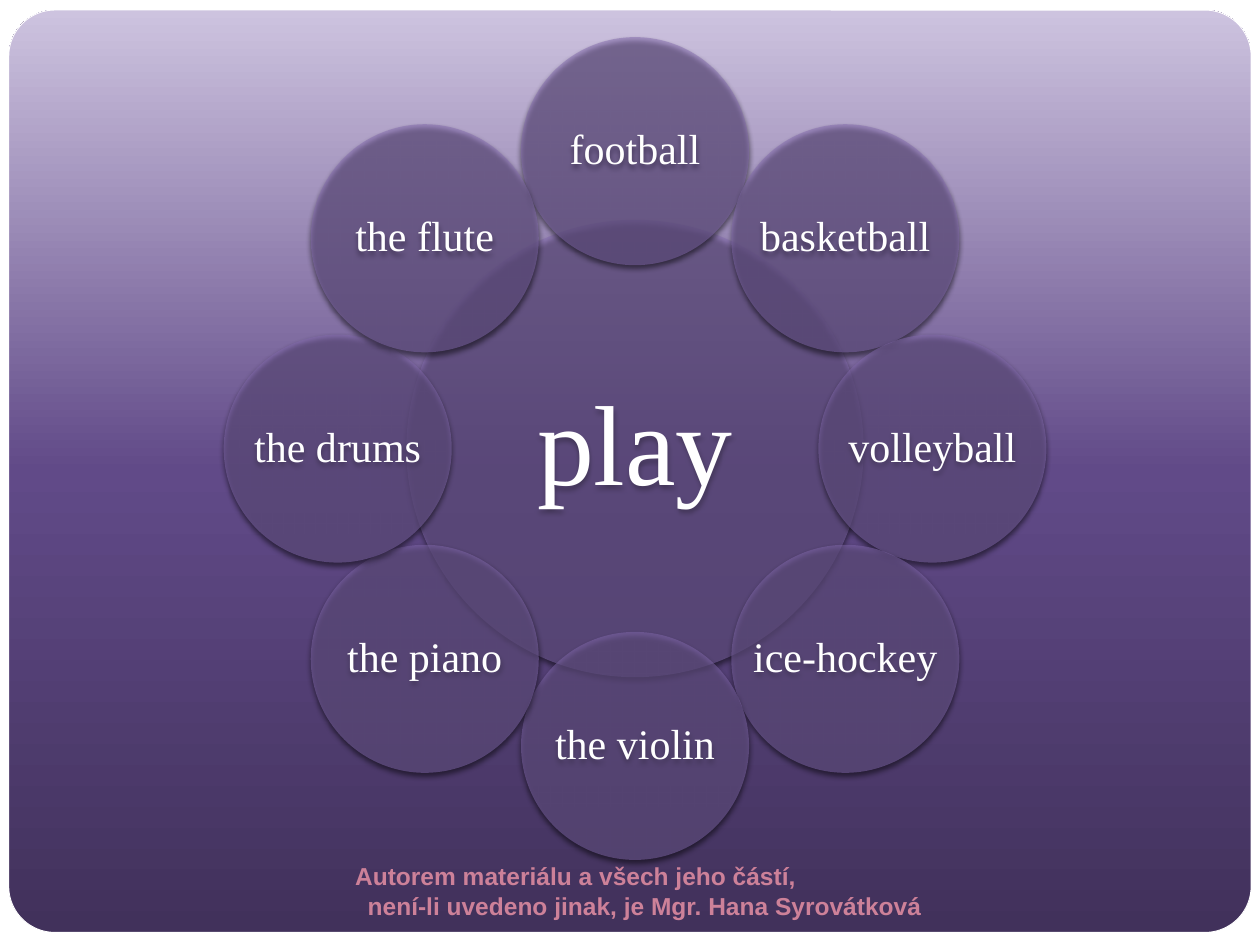
import copy
import math

from lxml import etree
from pptx import Presentation
from pptx import util as u
from pptx.dml.color import RGBColor
from pptx.enum import shapes, text
from pptx.oxml import ns

COLORS = {
    "white": "FFFFFF",
    "black": "000000",
    "dusk": "41315B",
    "violet": "614A88",
    "lilac": "CDC3DF",
    "bubble": "836AAE",
    "credit": "CD8199",
}
ACTIVITIES = [
    "football", "basketball", "volleyball", "ice-hockey",
    "the violin", "the piano", "the drums", "the flute",
]
CREDIT_LINES = [
    ("Autorem materiálu a všech jeho částí,", 0),
    ("není-li uvedeno jinak, je Mgr. Hana Syrovátková", 0.1),
]
CENTER_X, CENTER_Y = 5.04, 3.56
RING_RADIUS = 2.36
HUB_SIZE, BUBBLE_SIZE = 3.63, 1.81


def color(name):
    return RGBColor.from_string(COLORS[name])


def set_attributes(target, values):
    for name, value in values.items():
        setattr(target, name, value)


def add_child(parent, tag, **attributes):
    child = etree.SubElement(parent, ns.qn(tag))
    for name, value in attributes.items():
        child.set(name, str(value))
    return child


def fill_gradient(fill, names):
    fill.gradient()
    fill.gradient_angle = 90
    first, last = fill.gradient_stops
    stop_list = first._gs.getparent()
    stop_list.insert(1, copy.deepcopy(first._gs))
    for index, (stop, name) in enumerate(zip(fill.gradient_stops, names)):
        stop.color.rgb = color(name)
        stop.position = index / (len(names) - 1)


def add_panel(slide):
    panel = slide.shapes.add_shape(
        shapes.MSO_SHAPE.ROUNDED_RECTANGLE,
        u.Inches(0.07), u.Inches(0.08), u.Inches(9.86), u.Inches(7.32),
    )
    panel.adjustments[0] = 0.05
    panel.shadow.inherit = False
    fill_gradient(panel.fill, ["dusk", "violet", "lilac"])
    panel.line.color.rgb = color("white")
    panel.line.width = u.Pt(0.5)


def add_shadow(shape):
    shape.shadow.inherit = False
    effects = shape._element.spPr.find(ns.qn("a:effectLst"))
    shadow = add_child(
        effects, "a:outerShdw", blurRad=u.Pt(3), dist=u.Pt(2),
        dir=90 * 60000, rotWithShape=0,
    )
    shade = add_child(shadow, "a:srgbClr", val=COLORS["black"])
    add_child(shade, "a:alpha", val=50000)


def write_paragraph(paragraph, words, font_values, paragraph_values):
    run = paragraph.add_run()
    run.text = words
    font_color = font_values.pop("color")
    set_attributes(run.font, font_values)
    run.font.color.rgb = color(font_color)
    set_attributes(paragraph, paragraph_values)


def add_bubble(slide, words, center_x, center_y, diameter, font_size, inset):
    bubble = slide.shapes.add_shape(
        shapes.MSO_SHAPE.OVAL,
        u.Inches(center_x - diameter / 2), u.Inches(center_y - diameter / 2),
        u.Inches(diameter), u.Inches(diameter),
    )
    bubble.fill.solid()
    bubble.fill.fore_color.rgb = color("bubble")
    fill_color = bubble._element.spPr.find(".//" + ns.qn("a:srgbClr"))
    add_child(fill_color, "a:alpha", val=50000)
    bubble.line.fill.background()
    add_shadow(bubble)
    frame = bubble.text_frame
    sides = ("left", "top", "right", "bottom")
    set_attributes(frame, {f"margin_{side}": u.Inches(inset) for side in sides})
    set_attributes(frame, {
        "word_wrap": False,
        "vertical_anchor": text.MSO_ANCHOR.MIDDLE,
    })
    write_paragraph(
        frame.paragraphs[0], words,
        {"name": "Times New Roman", "size": u.Pt(font_size), "color": "white"},
        {"alignment": text.PP_ALIGN.CENTER, "line_spacing": 0.9},
    )


def add_ring(slide):
    step = 2 * math.pi / len(ACTIVITIES)
    for index, activity in enumerate(ACTIVITIES):
        add_bubble(
            slide, activity,
            CENTER_X + RING_RADIUS * math.sin(index * step),
            CENTER_Y - RING_RADIUS * math.cos(index * step),
            BUBBLE_SIZE, 24, 0.03,
        )


def add_credit(slide):
    box = slide.shapes.add_textbox(
        u.Inches(2.72), u.Inches(6.81), u.Inches(4.8), u.Inches(0.52)
    )
    frame = box.text_frame
    set_attributes(frame, {
        "word_wrap": True,
        "vertical_anchor": text.MSO_ANCHOR.MIDDLE,
    })
    for index, (words, indent) in enumerate(CREDIT_LINES):
        paragraph = frame.add_paragraph() if index else frame.paragraphs[0]
        write_paragraph(
            paragraph, words,
            {"name": "Arial", "size": u.Pt(14), "bold": True, "color": "credit"},
            {"alignment": text.PP_ALIGN.LEFT},
        )
        paragraph._p.get_or_add_pPr().set("marL", str(u.Inches(indent)))


def main():
    presentation = Presentation()
    set_attributes(presentation, {
        "slide_width": u.Inches(10),
        "slide_height": u.Inches(7.5),
    })
    slide = presentation.slides.add_slide(presentation.slide_layouts[6])
    slide.background.fill.solid()
    slide.background.fill.fore_color.rgb = color("white")
    add_panel(slide)
    add_bubble(slide, "play", CENTER_X, CENTER_Y, HUB_SIZE, 65, 0.09)
    add_ring(slide)
    add_credit(slide)
    presentation.save("out.pptx")


if __name__ == "__main__":
    main()
